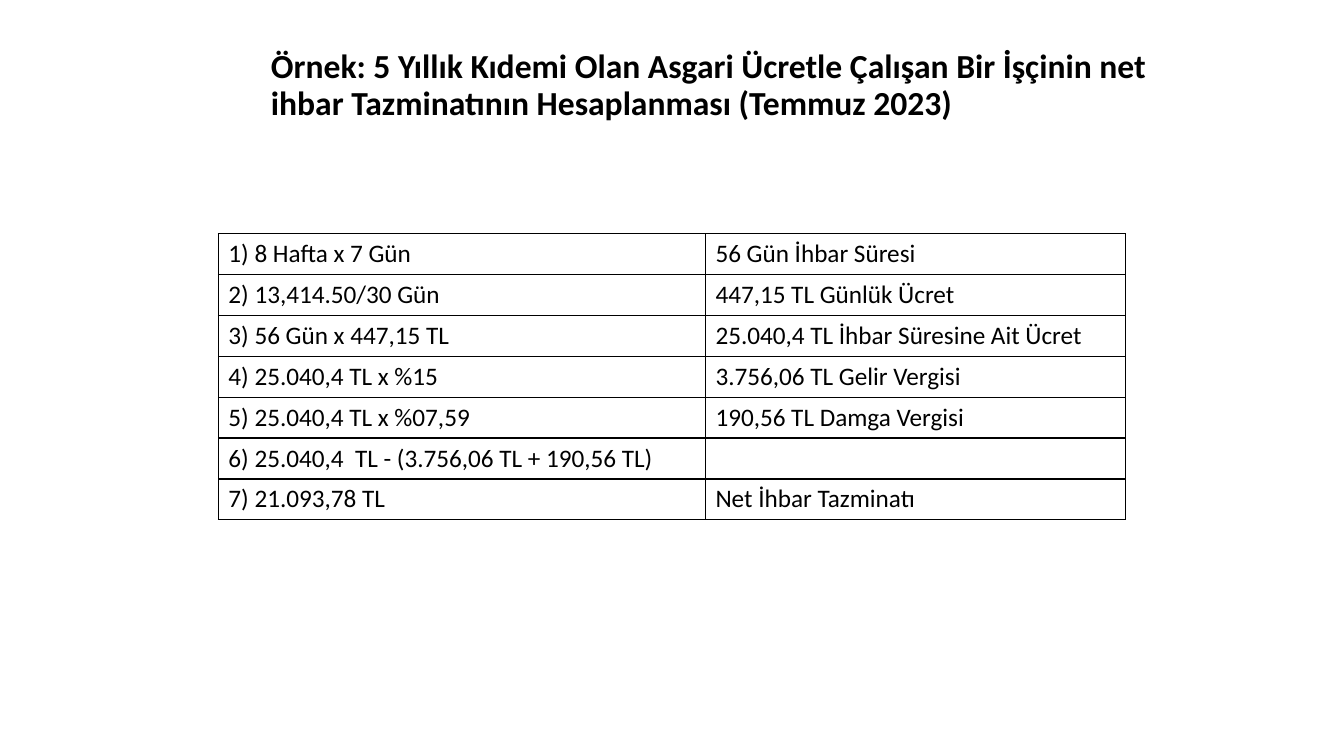
from lxml.etree import SubElement
from pptx import Presentation
from pptx.dml.color import RGBColor
from pptx.enum.text import MSO_ANCHOR
from pptx.oxml.ns import qn
from pptx.util import Pt

TITLE = (
    "Örnek: 5 Yıllık Kıdemi Olan Asgari Ücretle Çalışan Bir İşçinin net "
    "ihbar Tazminatının Hesaplanması (Temmuz 2023)"
)
CALCULATION = [
    ("1) 8 Hafta x 7 Gün", "56 Gün İhbar Süresi"),
    ("2) 13,414.50/30 Gün", "447,15 TL Günlük Ücret"),
    ("3) 56 Gün x 447,15 TL", "25.040,4 TL İhbar Süresine Ait Ücret"),
    ("4) 25.040,4 TL x %15", "3.756,06 TL Gelir Vergisi"),
    ("5) 25.040,4 TL x %07,59", "190,56 TL Damga Vergisi"),
    ("6) 25.040,4  TL - (3.756,06 TL + 190,56 TL)", ""),
    ("7) 21.093,78 TL", "Net İhbar Tazminatı"),
]
COLORS = {"text": "000000", "border": "000000"}
FONT = "Calibri"
COLUMN_WIDTHS = (347.9, 300.1)
ROW_HEIGHT = 29.2
BORDER_WIDTH = 1


def add_run(paragraph, text, size, bold=False):
    run = paragraph.add_run()
    run.text = text
    run.font.name = FONT
    run.font.size = Pt(size)
    run.font.bold = bold
    run.font.color.rgb = RGBColor.from_string(COLORS["text"])


def add_borders(cell):
    properties = cell._tc.get_or_add_tcPr()
    for side in ("a:lnL", "a:lnR", "a:lnT", "a:lnB"):
        line = SubElement(properties, qn(side), w=str(Pt(BORDER_WIDTH)))
        fill = SubElement(line, qn("a:solidFill"))
        SubElement(fill, qn("a:srgbClr"), val=COLORS["border"])


def add_title(slide):
    shape = slide.shapes.add_textbox(Pt(186.5), Pt(16.5), Pt(648), Pt(90))
    frame = shape.text_frame
    frame.word_wrap = True
    frame.vertical_anchor = MSO_ANCHOR.MIDDLE
    paragraph = frame.paragraphs[0]
    paragraph.line_spacing = 0.9
    add_run(paragraph, TITLE, 24, bold=True)


def add_calculation(slide):
    table = slide.shapes.add_table(
        len(CALCULATION), len(COLUMN_WIDTHS), Pt(156), Pt(166.9),
        Pt(sum(COLUMN_WIDTHS)), Pt(ROW_HEIGHT * len(CALCULATION)),
    ).table
    table.first_row = False
    table.horz_banding = False
    for column, width in zip(table.columns, COLUMN_WIDTHS):
        column.width = Pt(width)
    for row, texts in zip(table.rows, CALCULATION):
        row.height = Pt(ROW_HEIGHT)
        for cell, text in zip(row.cells, texts):
            add_borders(cell)
            cell.fill.background()
            if text:
                add_run(cell.text_frame.paragraphs[0], text, 18)


def main():
    presentation = Presentation()
    presentation.slide_width = Pt(960)
    presentation.slide_height = Pt(540)
    slide = presentation.slides.add_slide(presentation.slide_layouts[6])
    add_title(slide)
    add_calculation(slide)
    presentation.save("out.pptx")


if __name__ == "__main__":
    main()
